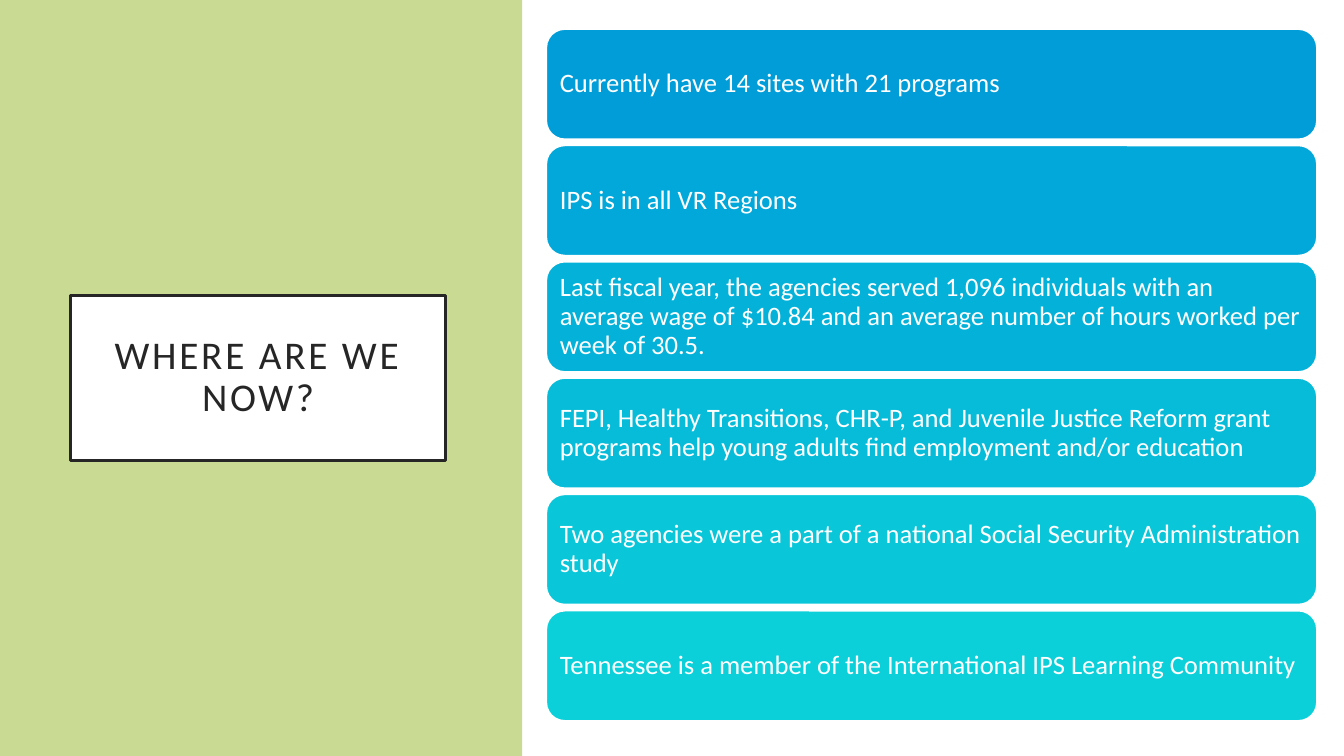
import pptx
import pptx.util
import pptx.dml.color
import pptx.enum.shapes
import pptx.enum.text

SHAPE = pptx.enum.shapes.MSO_SHAPE
ALIGN = pptx.enum.text.PP_ALIGN
WIDTH, HEIGHT = 13.33, 7.5

# Card column: left edge, first top, card size, distance between tops
CARD_LEFT, CARD_TOP = 5.42, 0.29
CARD_WIDTH, CARD_HEIGHT = 7.64, 1.09
CARD_PITCH = 1.154

CARDS = [
    ("009DD9", "Currently have 14 sites with 21 programs"),
    ("02A8D9", "IPS is in all VR Regions"),
    ("04B2D9", "Last fiscal year, the agencies served 1,096 individuals with an "
               "average wage of $10.84 and an average number of hours worked per "
               "week of 30.5."),
    ("06BCD9", "FEPI, Healthy Transitions, CHR-P, and Juvenile Justice Reform grant "
               "programs help young adults find employment and/or education"),
    ("09C6D9", "Two agencies were a part of a national Social Security Administration study"),
    ("0BD0D9", "Tennessee is a member of the International IPS Learning Community"),
]


def rgb(value):
    return pptx.dml.color.RGBColor.from_string(value)


def inches(*values):
    return [pptx.util.Inches(v) for v in values]


def paint(sp, fill, line=None, width=1):
    sp.fill.solid()
    sp.fill.fore_color.rgb = rgb(fill)
    if line:
        sp.line.color.rgb = rgb(line)
        sp.line.width = pptx.util.Pt(width)
    else:
        sp.line.fill.background()


def add_block(s, preset, box, fill, line=None):
    sp = s.shapes.add_shape(preset, *inches(*box))
    sp.shadow.inherit = False
    paint(sp, fill, line)
    return sp


def write(sp, text, size, color, align, inset):
    tf = sp.text_frame
    tf.text = text
    tf.word_wrap = True
    tf.auto_size = pptx.enum.text.MSO_AUTO_SIZE.NONE
    tf.vertical_anchor = pptx.enum.text.MSO_ANCHOR.MIDDLE
    tf.margin_left = tf.margin_right = pptx.util.Inches(inset)
    tf.margin_top = tf.margin_bottom = pptx.util.Inches(inset)
    p = tf.paragraphs[0]
    p.alignment = align
    p.line_spacing = 0.9
    r = p.runs[0]
    r.font.name = "Calibri"
    r.font.size = pptx.util.Pt(size)
    r.font.color.rgb = rgb(color)
    return r


def format_title(s):
    title = s.shapes.title
    title.left, title.top, title.width, title.height = inches(0.7, 2.93, 3.72, 1.64)
    paint(title, "FFFFFF", "262626", 2.5)
    r = write(title, "WHERE ARE WE NOW?", 28, "262626", ALIGN.CENTER, 0.2)
    r.font._element.set("spc", "200")  # letter spacing, hundredths of a point
    return title


def add_card(s, row, fill, text):
    top = CARD_TOP + row * CARD_PITCH
    sp = add_block(s, SHAPE.ROUNDED_RECTANGLE,
                   (CARD_LEFT, top, CARD_WIDTH, CARD_HEIGHT), fill, "FFFFFF")
    write(sp, text, 19, "FFFFFF", ALIGN.LEFT, 0.08)


def main():
    prs = pptx.Presentation()
    prs.slide_width, prs.slide_height = inches(WIDTH, HEIGHT)
    s = prs.slides.add_slide(prs.slide_layouts[5])

    # Title box in front of the green side panel
    title = format_title(s)
    panel = add_block(s, SHAPE.RECTANGLE, (0, 0, 5.18, HEIGHT), "C9DA92")
    title._element.addprevious(panel._element)

    # White content area with its column of cards
    add_block(s, SHAPE.RECTANGLE, (5.2, 0, WIDTH - 5.2, HEIGHT), "FFFFFF")
    for row, (fill, text) in enumerate(CARDS):
        add_card(s, row, fill, text)

    prs.save("out.pptx")


if __name__ == "__main__":
    main()
